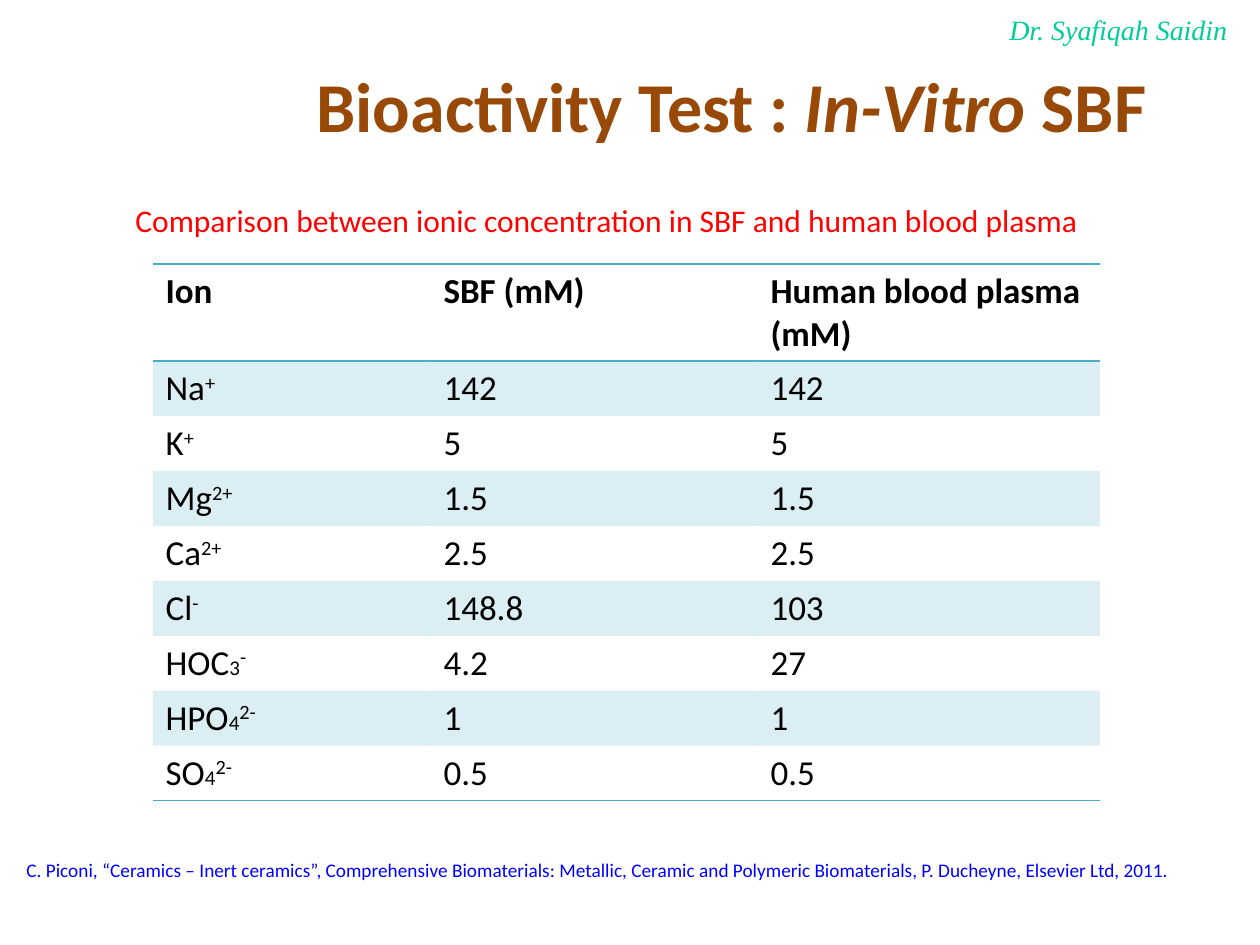
import pptx
import pptx.util
import pptx.dml.color
import pptx.enum.text
import pptx.oxml
import pptx.oxml.ns

PX = 914400 / 126
COLORS = {"title": "984807", "author": "00CC99", "caption": "FF0000",
          "source": "0000FF", "text": "000000", "accent": "4BACC6"}
NO_STYLE = "{2D5ABB26-0587-4C30-8999-92F81FD0307C}"


def px(length):
    return pptx.util.Emu(round(length * PX))


def write(frame, parts, size, color, font="Calibri", bold=False):
    para = frame.paragraphs[0]
    para.alignment = pptx.enum.text.PP_ALIGN.LEFT
    for text, kind in parts:
        span = para.add_run()
        span.text = text
        span.font.name = font
        span.font.size = pptx.util.Pt(12 if kind == "small" else size)
        span.font.bold = bold
        span.font.italic = kind == "italic"
        span.font.color.rgb = pptx.dml.color.RGBColor.from_string(COLORS[color])
        if kind == "raised":
            span.font._element.set("baseline", "30000")


deck = pptx.Presentation()
deck.slide_width, deck.slide_height = px(1260), px(945)
page = deck.slides.add_slide(deck.slide_layouts[5])

title = page.shapes.title
title.left, title.top, title.width, title.height = px(304), px(56), px(874), px(97)
title.text_frame.word_wrap = False
title.text_frame.auto_size = pptx.enum.text.MSO_AUTO_SIZE.SHAPE_TO_FIT_TEXT
write(title.text_frame,
      [("Bioactivity Test : ", ""), ("In-Vitro ", "italic"), ("SBF", "")],
      40, "title", bold=True)

labels = [
    ((997, 6, 253, 47), "Dr. Syafiqah Saidin", "italic", 16, "author", "Times New Roman", False),
    ((123, 195, 979, 50), "Comparison between ionic concentration in SBF and human blood plasma",
     "", 18, "caption", "Calibri", False),
    ((14, 852, 1200, 36),
     "C. Piconi, “Ceramics – Inert ceramics”, Comprehensive Biomaterials: Metallic, Ceramic and "
     "Polymeric Biomaterials, P. Ducheyne, Elsevier Ltd, 2011.",
     "", 11, "source", "Calibri", True),
]
for place, text, kind, size, color, font, wrap in labels:
    box = page.shapes.add_textbox(*map(px, place))
    box.text_frame.word_wrap = wrap
    box.text_frame.auto_size = pptx.enum.text.MSO_AUTO_SIZE.SHAPE_TO_FIT_TEXT
    write(box.text_frame, [(text, kind)], size, color, font)

rows = [
    (("Ion", "", ""), "SBF (mM)", "Human blood plasma (mM)"),
    (("Na", "", "+"), "142", "142"),
    (("K", "", "+"), "5", "5"),
    (("Mg", "", "2+"), "1.5", "1.5"),
    (("Ca", "", "2+"), "2.5", "2.5"),
    (("Cl", "", "-"), "148.8", "103"),
    (("HOC", "3", "-"), "4.2", "27"),
    (("HPO", "4", "2-"), "1", "1"),
    (("SO", "4", "2-"), "0.5", "0.5"),
]
widths = [278, 327, 342]
table = page.shapes.add_table(len(rows), len(widths), px(153), px(264),
                              px(sum(widths)), px(534)).table
table._tbl.tblPr.find(pptx.oxml.ns.qn("a:tableStyleId")).text = NO_STYLE
table.horz_banding = False
for column, width in zip(table.columns, widths):
    column.width = px(width)

for index, (ion, *amounts) in enumerate(rows):
    table.rows[index].height = px(97 if index == 0 else 55)
    edges = {0: ["lnT", "lnB"], len(rows) - 1: ["lnB"]}.get(index, [])
    ion_parts = [part for part in zip(ion, ("", "small", "raised")) if part[0]]
    contents = [ion_parts] + [[(amount, "")] for amount in amounts]
    for cell, parts in zip(table.rows[index].cells, contents):
        write(cell.text_frame, parts, 20, "text", bold=index == 0)
        properties = cell._tc.get_or_add_tcPr()
        for edge in edges:
            properties.append(pptx.oxml.parse_xml(
                f'<a:{edge} {pptx.oxml.ns.nsdecls("a")} w="12700"><a:solidFill>'
                f'<a:srgbClr val="{COLORS["accent"]}"/></a:solidFill></a:{edge}>'))
        if index % 2:
            cell.fill.solid()
            cell.fill.fore_color.rgb = pptx.dml.color.RGBColor.from_string(COLORS["accent"])
            tint = properties.find(".//" + pptx.oxml.ns.qn("a:srgbClr"))
            tint.append(pptx.oxml.parse_xml(
                f'<a:alpha {pptx.oxml.ns.nsdecls("a")} val="20000"/>'))
        else:
            cell.fill.background()

deck.save("out.pptx")
